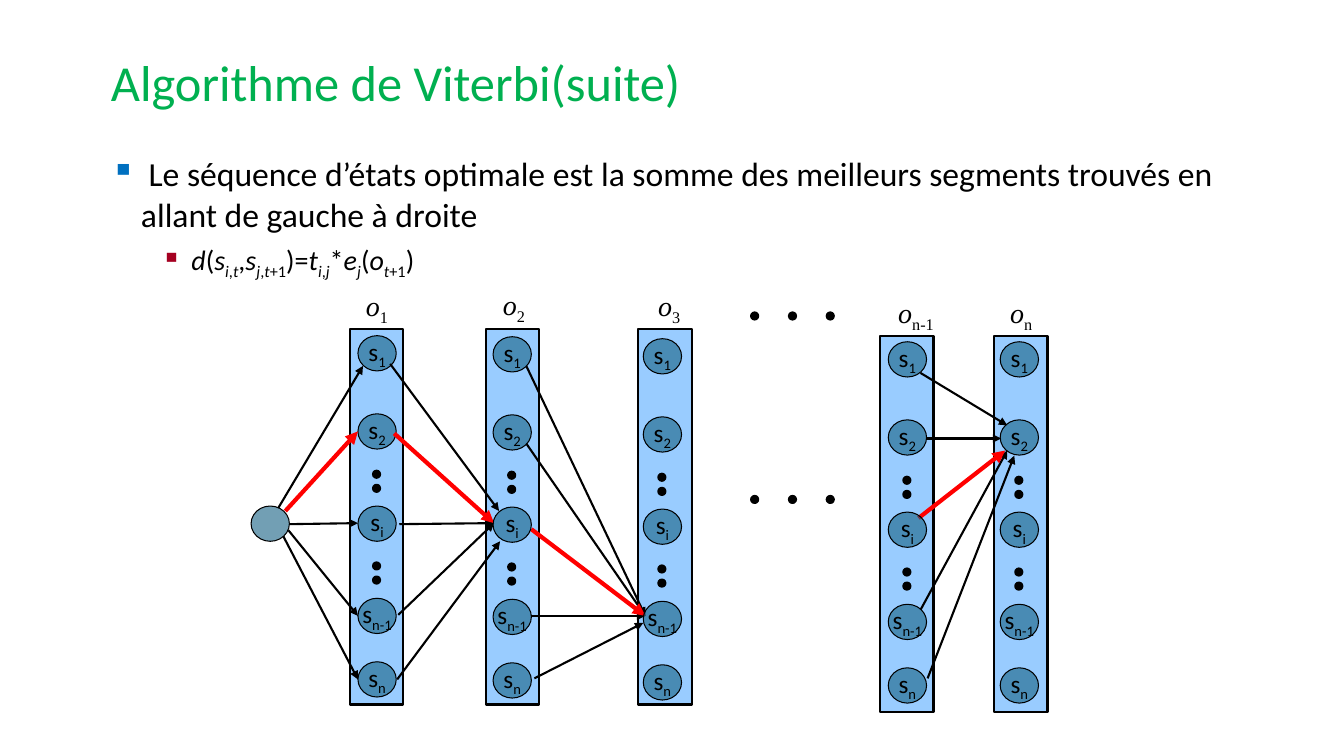
from pptx import Presentation
from pptx.dml.color import RGBColor
from pptx.enum.shapes import MSO_CONNECTOR, MSO_SHAPE
from pptx.enum.text import MSO_ANCHOR, MSO_AUTO_SIZE, PP_ALIGN
from pptx.oxml.ns import qn
from pptx.util import Inches, Pt
from lxml import etree

RECT, OVAL = MSO_SHAPE.RECTANGLE, MSO_SHAPE.OVAL
STRAIGHT = MSO_CONNECTOR.STRAIGHT
MIDDLE, GROW = MSO_ANCHOR.MIDDLE, MSO_AUTO_SIZE.SHAPE_TO_FIT_TEXT
LEFT, CENTER = PP_ALIGN.LEFT, PP_ALIGN.CENTER

BLACK = RGBColor(0x00, 0x00, 0x00)
RED = RGBColor(0xFF, 0x00, 0x00)
GREEN = RGBColor(0x00, 0xB0, 0x50)
BLUE = RGBColor(0x00, 0x70, 0xC0)
WINE = RGBColor(0xA5, 0x00, 0x21)
SKY = RGBColor(0x99, 0xCC, 0xFF)
TEAL = RGBColor(0x15, 0x60, 0x82)

# All lengths are counted in square grid cells: 133.3 columns by 75 rows.
CELL = Inches(0.1)
SANS, SERIF = "Calibri", "Times New Roman"

# Subscript of o, bar left and top, state left and top, label left and top
STEPS = [
    ("1", 34.7, 32.6, 35.5, 33.3, 35.3, 28.1),
    ("2", 48.2, 32.6, 48.9, 33.4, 48.9, 28.0),
    ("3", 63.3, 32.6, 63.8, 33.6, 64.3, 28.1),
    ("n-1", 87.3, 33.3, 88.1, 33.9, 88.1, 28.8),
    ("n", 98.6, 33.3, 99.2, 33.9, 99.2, 28.8),
]
STATES = [("1", 0), ("2", 7.75), ("i", 16.9), ("n-1", 26.05), ("n", 32.35)]
DOTS = [13.4, 14.8, 22.5, 23.9]

# x and y of the start, x and y of the end
LATE = [
    (52.7, 61.1, 64, 61.1), (53, 67.3, 63.8, 61.8),
    (52.2, 44, 64, 61.1), (52.2, 36.3, 64, 61.1),
    (91.8, 43.5, 99.3, 43.5), (91.3, 60.5, 99.9, 44.7),
    (92, 67.3, 100.6, 45.2), (91.3, 37, 99.9, 42.2),
]
EARLY = [
    (27.6, 50.4, 36, 36.3), (28.7, 52, 35.5, 51.9),
    (28.6, 52.6, 35.5, 61.1), (28.1, 53.2, 35.5, 67.4),
    (38.7, 36.1, 49.5, 50.7), (39.6, 52, 49, 51.9),
    (39.5, 61, 49, 51.9), (39.4, 67.4, 49.6, 53.7),
]
BEST = [
    (28.3, 50.7, 35.5, 42.8), (39.1, 43, 49, 51.9),
    (52.7, 52.5, 64, 61.1),
]
LAST = (91.1, 51.4, 99.7, 44.7)

# Marks: i italic, _ subscript
FORMULA = [
    ("d", "i"), ("(", ""), ("s", "i"), ("i", "i_"), (",", "_"), ("t", "i_"),
    (",", ""), ("s", "i"), ("j", "i_"), (",", "_"), ("t", "i_"), ("+1", "_"),
    (")=", ""), ("t", "i"), ("i", "i_"), (",", "_"), ("j", "i_"), ("*", ""),
    ("e", "i"), ("j", "i_"), ("(", ""), ("o", "i"), ("t", "i_"), ("+1", "_"),
    (")", ""),
]


def cells(*nums):
    return [round(n * CELL) for n in nums]


def style(para, size, color=BLACK, face=SANS):
    font = para.font
    font.size, font.name = Pt(size), face
    font.color.rgb = color


def write(para, parts):
    """Add runs of (text, marks) to a paragraph."""
    for text, marks in parts:
        run = para.add_run()
        run.text = text
        run.font.italic = "i" in marks
        if "_" in marks:
            run.font._element.set("baseline", "-25000")


def bullet(para, color, left):
    para.space_after = Pt(6)
    props = para._p.get_or_add_pPr()
    props.set("marL", str(Inches(left)))
    props.set("indent", str(Inches(-0.3)))
    tint = etree.Element(qn("a:buClr"))
    etree.SubElement(tint, qn("a:srgbClr"), val=str(color))
    sign = etree.Element(qn("a:buChar"), char="▪")
    spot = props.find(qn("a:defRPr"))
    spot.addprevious(tint)
    spot.addprevious(sign)


def shape(home, kind, box, fill, width):
    item = home.add_shape(kind, *cells(*box))
    item.shadow.inherit = False
    item.fill.solid()
    item.fill.fore_color.rgb = fill
    item.line.color.rgb = BLACK
    item.line.width = Pt(width)
    return item


def node(home, x, y):
    """Draw a translucent state circle."""
    item = shape(home, OVAL, (x, y, 3.8, 3.5), TEAL, 0.75)
    tint = item.fill._xPr.find(".//" + qn("a:srgbClr"))
    etree.SubElement(tint, qn("a:alpha"), val="60000")
    return item


def dot(home, x, y):
    shape(home, OVAL, (x, y, 0.7, 0.7), BLACK, 1.5)


def arrow(home, ends, color=BLACK, width=1.5):
    link = home.add_connector(STRAIGHT, *cells(*ends))
    link.line.color.rgb = color
    link.line.width = Pt(width)
    etree.SubElement(link.line._get_or_add_ln(), qn("a:tailEnd"),
                     type="triangle")
    etree.SubElement(link._element.spPr, qn("a:effectLst"))


def label(home, sub, x, y):
    width = 4.4 if len(sub) == 1 else 5.9
    frame = home.add_textbox(*cells(x, y, width, 4.4)).text_frame
    frame.word_wrap, frame.auto_size = False, GROW
    para = frame.paragraphs[0]
    style(para, 20, face=SERIF)
    write(para, [("o", "i"), (sub, "_")])


def column(home, x, top):
    """Draw the states of one step, with dots between them."""
    group = home.add_group_shape().shapes
    for sub, down in STATES:
        frame = node(group, x, top + down).text_frame
        frame.word_wrap, frame.vertical_anchor = False, MIDDLE
        para = frame.paragraphs[0]
        para.alignment = CENTER
        style(para, 18)
        write(para, [("s", ""), (sub, "_")])
    for down in DOTS:
        dot(group, x + 1.5, top + down)


def heading(title):
    title.left, title.top, title.width, title.height = cells(
        10, 3.9, 105.7, 9.2)
    frame = title.text_frame
    frame.text = "Algorithme de Viterbi(suite)"
    frame.vertical_anchor = MIDDLE
    para = frame.paragraphs[0]
    para.alignment, para.line_spacing = LEFT, 0.9
    style(para, 36, GREEN)


def body(home):
    frame = home.add_textbox(*cells(10, 14.7, 111.9, 13.3)).text_frame
    frame.word_wrap, frame.auto_size = True, GROW
    lead, rule = frame.paragraphs[0], frame.add_paragraph()
    style(lead, 24)
    bullet(lead, BLUE, 0.3)
    write(lead, [(" Le séquence d’états optimale est la somme des meilleurs "
                  "segments trouvés en allant de gauche à droite", "")])
    rule.level = 1
    style(rule, 20)
    bullet(rule, WINE, 0.8)
    write(rule, FORMULA)


def main():
    deck = Presentation()
    deck.slide_width, deck.slide_height = Inches(13.33), Inches(7.5)
    slide = deck.slides.add_slide(deck.slide_layouts[5])
    home = slide.shapes
    heading(home.title)
    body(home)

    for sub, x, y, _, _, tag_x, tag_y in STEPS:
        shape(home, RECT, (x, y, 5.3, 37.3), SKY, 1.5)
        label(home, sub, tag_x, tag_y)
    for ends in LATE:
        arrow(home, ends)
    arrow(home, LAST, RED, 3)
    node(home, 24.9, 50.2)
    for y in (31, 49.2):
        for i in range(3):
            dot(home, 74.5 + 3.75 * i, y)

    first, *rest = [step[3:5] for step in STEPS]
    column(home, *first)
    for ends in EARLY:
        arrow(home, ends)
    for ends in BEST:
        arrow(home, ends, RED, 3)
    for spot in rest:
        column(home, *spot)
    deck.save("out.pptx")


if __name__ == "__main__":
    main()
